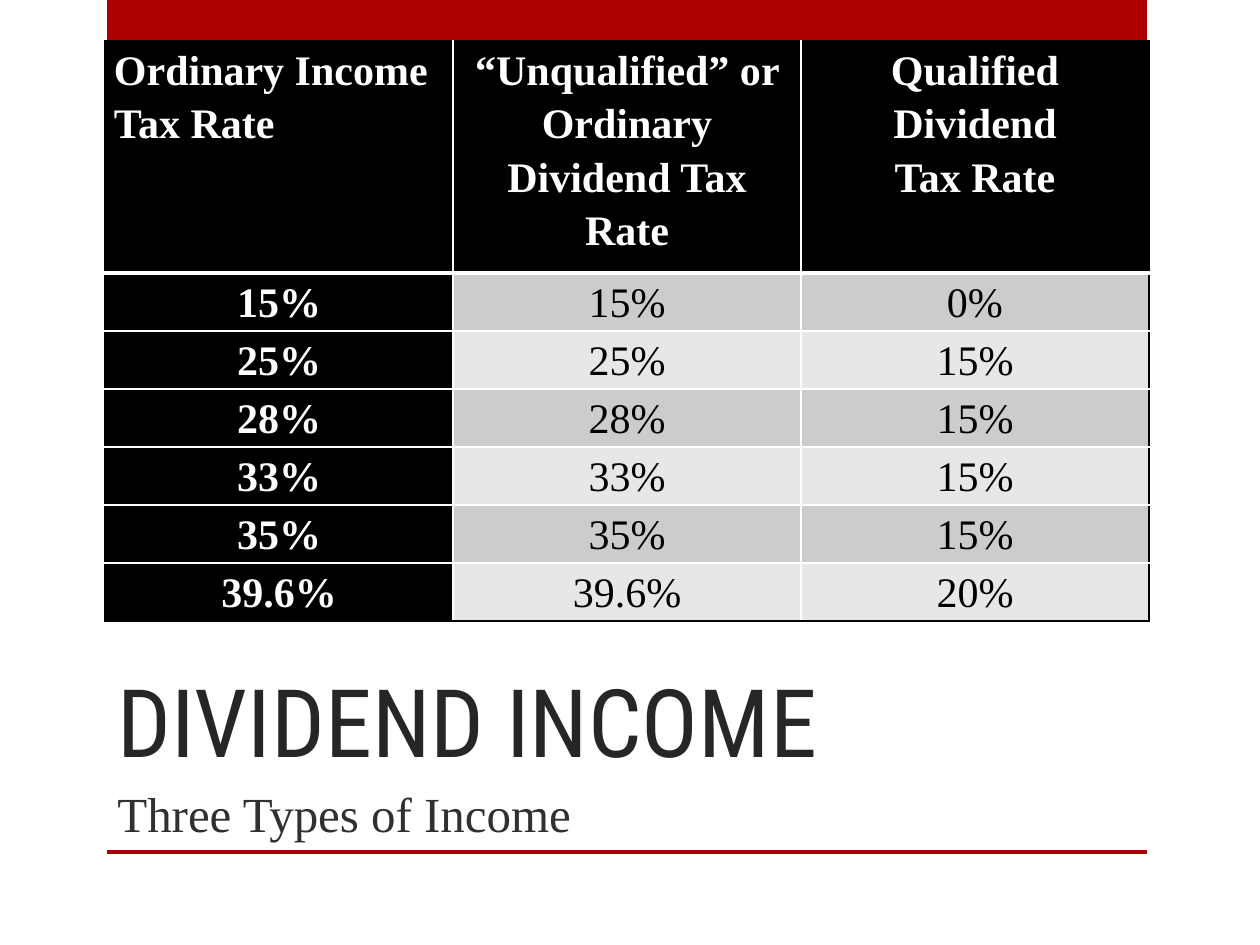
from pptx import Presentation
from pptx.dml.color import RGBColor
from pptx.enum.shapes import MSO_SHAPE
from pptx.enum.text import MSO_ANCHOR, PP_ALIGN
from pptx.oxml.ns import qn
from pptx.util import Pt
from lxml.etree import SubElement

EMU_PER_PX = 914400 / 126
RED = RGBColor(0xAD, 0x01, 0x01)
BLACK = RGBColor(0x00, 0x00, 0x00)
WHITE = RGBColor(0xFF, 0xFF, 0xFF)
TITLE_GRAY = RGBColor(0x26, 0x26, 0x26)
SUBTITLE_GRAY = RGBColor(0x30, 0x30, 0x30)
BAND_DARK = RGBColor(0xCC, 0xCC, 0xCC)
BAND_LIGHT = RGBColor(0xE7, 0xE7, 0xE7)
SERIF = "Times New Roman"
CONDENSED = "Roboto Condensed"

HEADERS = [
    ["Ordinary Income Tax Rate"],
    ["“Unqualified” or Ordinary", "Dividend Tax Rate"],
    ["Qualified Dividend", "Tax Rate"],
]
RATES = [
    ["15%", "15%", "0%"],
    ["25%", "25%", "15%"],
    ["28%", "28%", "15%"],
    ["33%", "33%", "15%"],
    ["35%", "35%", "15%"],
    ["39.6%", "39.6%", "20%"],
]


def px(length):
    return round(length * EMU_PER_PX)


def add_run(paragraph, text, font_name, size, color, bold=False):
    run = paragraph.add_run()
    run.text = text
    run.font.name = font_name
    run.font.size = Pt(size)
    run.font.color.rgb = color
    run.font.bold = bold


def add_bar(slide, left, top, width, height):
    bar = slide.shapes.add_shape(
        MSO_SHAPE.RECTANGLE, px(left), px(top), px(width), px(height))
    bar.shadow.inherit = False
    bar.fill.solid()
    bar.fill.fore_color.rgb = RED
    bar.line.fill.background()


def add_text(slide, left, top, width, height, text, font_name, size, color):
    text_box = slide.shapes.add_textbox(px(left), px(top), px(width), px(height))
    frame = text_box.text_frame
    frame.word_wrap = True
    add_run(frame.paragraphs[0], text, font_name, size, color)
    return frame


def add_frame(slide, left, top, width, height):
    add_bar(slide, left, top, width, 420)
    add_bar(slide, left, top + height - 4, width, 4)


def add_headings(slide, left, top, width):
    title = add_text(slide, left, top, width, 136,
                     "DIVIDEND INCOME", CONDENSED, 54, TITLE_GRAY)
    title.vertical_anchor = MSO_ANCHOR.BOTTOM
    title.margin_bottom = 0
    subtitle = add_text(slide, left, top + 137, width, 73,
                        "Three Types of Income", SERIF, 28, SUBTITLE_GRAY)
    subtitle.paragraphs[0].space_before = Pt(4)


def set_borders(cell, borders):
    properties = cell._tc.get_or_add_tcPr()
    for position, (side, (color, width)) in enumerate(borders.items()):
        line = properties.makeelement(qn(f"a:ln{side}"), {"w": str(Pt(width))})
        fill = SubElement(line, qn("a:solidFill"))
        SubElement(fill, qn("a:srgbClr"), val=str(color))
        properties.insert(position, line)


def fill_cell(cell, lines, fill, color, bold, alignment):
    cell.fill.solid()
    cell.fill.fore_color.rgb = fill
    cell.margin_left = cell.margin_right = px(9)
    cell.margin_top = cell.margin_bottom = 0
    frame = cell.text_frame
    for index, line in enumerate(lines):
        paragraph = frame.add_paragraph() if index else frame.paragraphs[0]
        paragraph.alignment = alignment
        paragraph.line_spacing = 1.15
        add_run(paragraph, line, SERIF, 24, color, bold)


def add_rate_table(slide, left, top, width, header_height, row_height):
    rows = [HEADERS] + [[[rate] for rate in rates] for rates in RATES]
    last_row, last_column = len(rows) - 1, len(HEADERS) - 1
    height = header_height + row_height * last_row
    table = slide.shapes.add_table(
        len(rows), len(HEADERS), px(left), px(top), px(width), px(height)).table
    table.first_row = table.horz_banding = False
    for column in table.columns:
        column.width = px(width / len(HEADERS))
    for row_index, row in enumerate(rows):
        table.rows[row_index].height = px(row_height if row_index else header_height)
        for column_index, lines in enumerate(row):
            cell = table.cell(row_index, column_index)
            is_heading = row_index == 0 or column_index == 0
            band = BAND_DARK if row_index % 2 else BAND_LIGHT
            is_corner = row_index == 0 and column_index == 0
            fill_cell(cell, lines,
                      BLACK if is_heading else band,
                      WHITE if is_heading else BLACK,
                      is_heading,
                      PP_ALIGN.LEFT if is_corner else PP_ALIGN.CENTER)
            set_borders(cell, {
                "L": (WHITE if column_index else BLACK, 1),
                "R": (BLACK if column_index == last_column else WHITE, 1),
                "T": (WHITE if row_index else BLACK, 3 if row_index == 1 else 1),
                "B": (BLACK if row_index == last_row else WHITE,
                      1 if row_index else 3),
            })


def main():
    presentation = Presentation()
    presentation.slide_width = px(1260)
    presentation.slide_height = px(945)
    slide = presentation.slides.add_slide(presentation.slide_layouts[6])
    add_frame(slide, 107, 0, 1040, 854)
    add_headings(slide, 105, 640, 1040)
    add_rate_table(slide, 105, 41, 1044, 214, 53)
    presentation.save("out.pptx")


if __name__ == "__main__":
    main()
